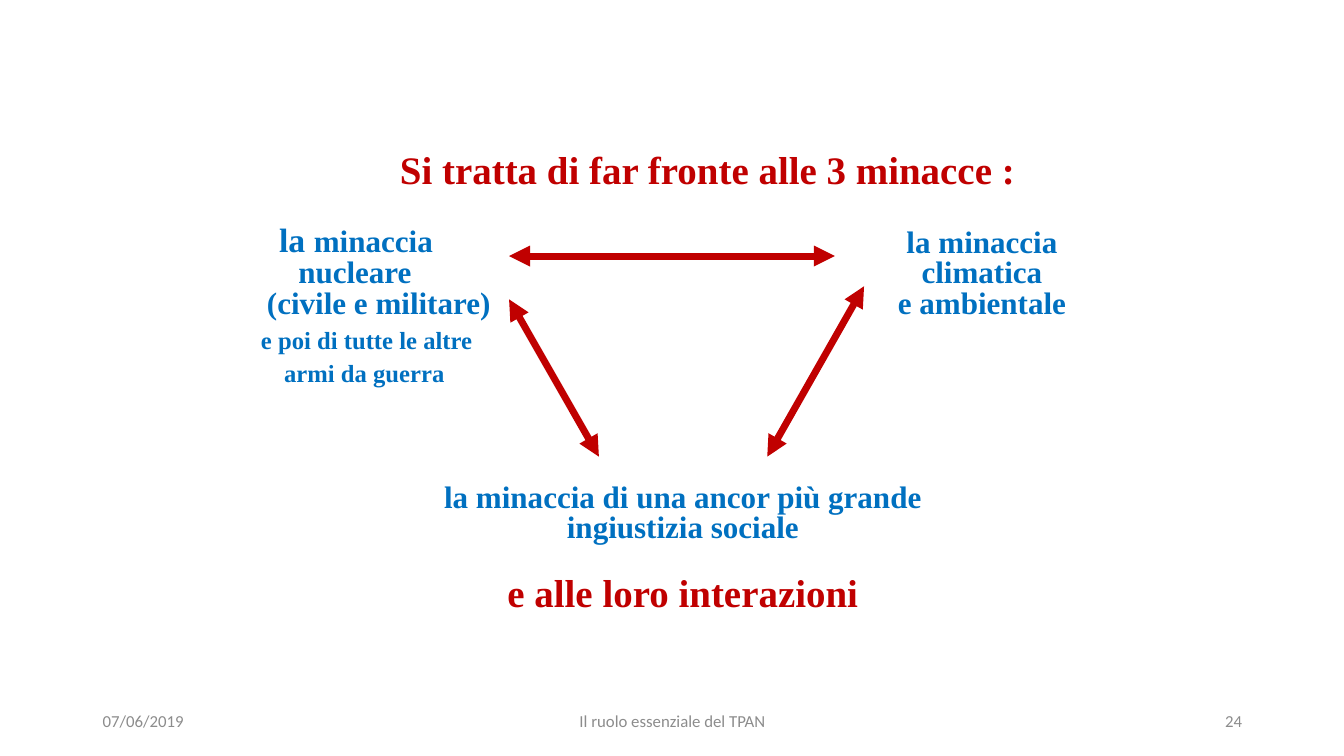
"""Build the slide on three threats and how they interact."""
from lxml import etree
from pptx import Presentation, util as u
from pptx.dml.color import RGBColor
from pptx.enum import shapes, text
from pptx.oxml.ns import qn

THEME = {
    "serif": "Times New Roman", "sans": "Calibri",
    "red": "C00000", "blue": "0070C0", "grey": "8C8C8C",
    "headline": 27.8, "lead": 24.1, "threat": 22.2, "aside": 17.6, "footer": 12,
    "tight": 21.8, "loose": 24, "arrow": 5,
}
LEFT, CENTER, RIGHT = text.PP_ALIGN.LEFT, text.PP_ALIGN.CENTER, text.PP_ALIGN.RIGHT
TOP, MIDDLE = text.MSO_ANCHOR.TOP, text.MSO_ANCHOR.MIDDLE

# Places are percentages of the slide: left, top, width, height.
HEADING = ("Si tratta di far fronte alle 3 minacce :", (22.66, 19.2, 60, 7))
CLOSING = ("e alle loro interazioni", (25.82, 75.2, 50, 7))
NUCLEAR_PLACE = (19.42, 30.27, 20, 22)
NUCLEAR = [
    ([("la ", "lead"), ("minaccia", "threat")], 0.18, "tight"),
    ([("nucleare", "threat")], 0.37, "tight"),
    ([("(civile e militare)", "threat")], 0.06, "tight"),
    ([("e poi di tutte le altre", "aside")], 0, "loose"),
    ([("armi da guerra", "aside")], 0.23, "loose"),
]
CENTERED_THREATS = [
    (["la minaccia", "climatica", "e ambientale"], (63.07, 30.27, 20, 13)),
    (["la minaccia di una ancor più grande", "ingiustizia sociale"], (25.82, 64, 50, 9)),
]
FOOTERS = [
    ("07/06/2019", LEFT, (6.9, 92.67, 22.5, 5.33)),
    ("Il ruolo essenziale del TPAN", CENTER, (33.16, 92.67, 33.76, 5.33)),
    ("24", RIGHT, (70.67, 92.67, 22.5, 5.33)),
]
INTERACTIONS = [
    (37.88, 33.87, 62.12, 33.87),
    (37.88, 39.6, 44.56, 60.4),
    (64.29, 37.87, 57.09, 60.4),
]

deck = Presentation()
deck.slide_width, deck.slide_height = u.Inches(13.33), u.Inches(7.5)
slide = deck.slides.add_slide(deck.slide_layouts[5])


def span(place):
    """Turn alternating horizontal and vertical percentages into lengths."""
    sides = (deck.slide_width, deck.slide_height) * 2
    return [int(share * side / 100) for share, side in zip(place, sides)]


def apply(target, formats):
    """Set each named attribute on the target."""
    for name, value in formats.items():
        setattr(target, name, value)


def write(box, lines, align, color, face="serif", bold=True, anchor=TOP, inset=0):
    """Fill a box with lines of (runs, indent, spacing)."""
    frame = box.text_frame
    margin = u.Inches(inset)
    apply(frame, {"word_wrap": True, "auto_size": text.MSO_AUTO_SIZE.NONE,
                  "vertical_anchor": anchor, "margin_left": margin,
                  "margin_right": margin, "margin_top": 0, "margin_bottom": 0})
    for number, (runs, indent, spacing) in enumerate(lines):
        line = frame.add_paragraph() if number else frame.paragraphs[0]
        apply(line, {"alignment": align,
                     "line_spacing": u.Pt(THEME[spacing]) if spacing else 1.0})
        if indent:
            line._p.get_or_add_pPr().set("marL", str(u.Inches(indent)))
        for words, size in runs:
            run = line.add_run()
            run.text = words
            apply(run.font, {"name": THEME[face], "size": u.Pt(THEME[size]), "bold": bold})
            run.font.color.rgb = RGBColor.from_string(THEME[color])


def add_box(place):
    """Add a text box at a place."""
    return slide.shapes.add_textbox(*span(place))


def add_interaction(ends):
    """Draw a two-headed arrow."""
    arrow = slide.shapes.add_connector(shapes.MSO_CONNECTOR.STRAIGHT, *span(ends))
    arrow.line.width = u.Pt(THEME["arrow"])
    arrow.line.color.rgb = RGBColor.from_string(THEME["red"])
    outline = arrow.line._get_or_add_ln()
    for tip in ("a:headEnd", "a:tailEnd"):
        etree.SubElement(outline, qn(tip), type="triangle")
    etree.SubElement(arrow._element.spPr, qn("a:effectLst"))


title = slide.shapes.title
apply(title, dict(zip(("left", "top", "width", "height"), span(HEADING[1]))))
for box, words in ((title, HEADING[0]), (add_box(CLOSING[1]), CLOSING[0])):
    write(box, [([(words, "headline")], 0, None)], CENTER, "red")

write(add_box(NUCLEAR_PLACE), NUCLEAR, LEFT, "blue")
for threat, place in CENTERED_THREATS:
    lines = [([(words, "threat")], 0, "tight") for words in threat]
    write(add_box(place), lines, CENTER, "blue")

for words, align, place in FOOTERS:
    write(add_box(place), [([(words, "footer")], 0, None)], align, "grey",
          face="sans", bold=False, anchor=MIDDLE, inset=0.1)

for ends in INTERACTIONS:
    add_interaction(ends)

deck.save("out.pptx")
